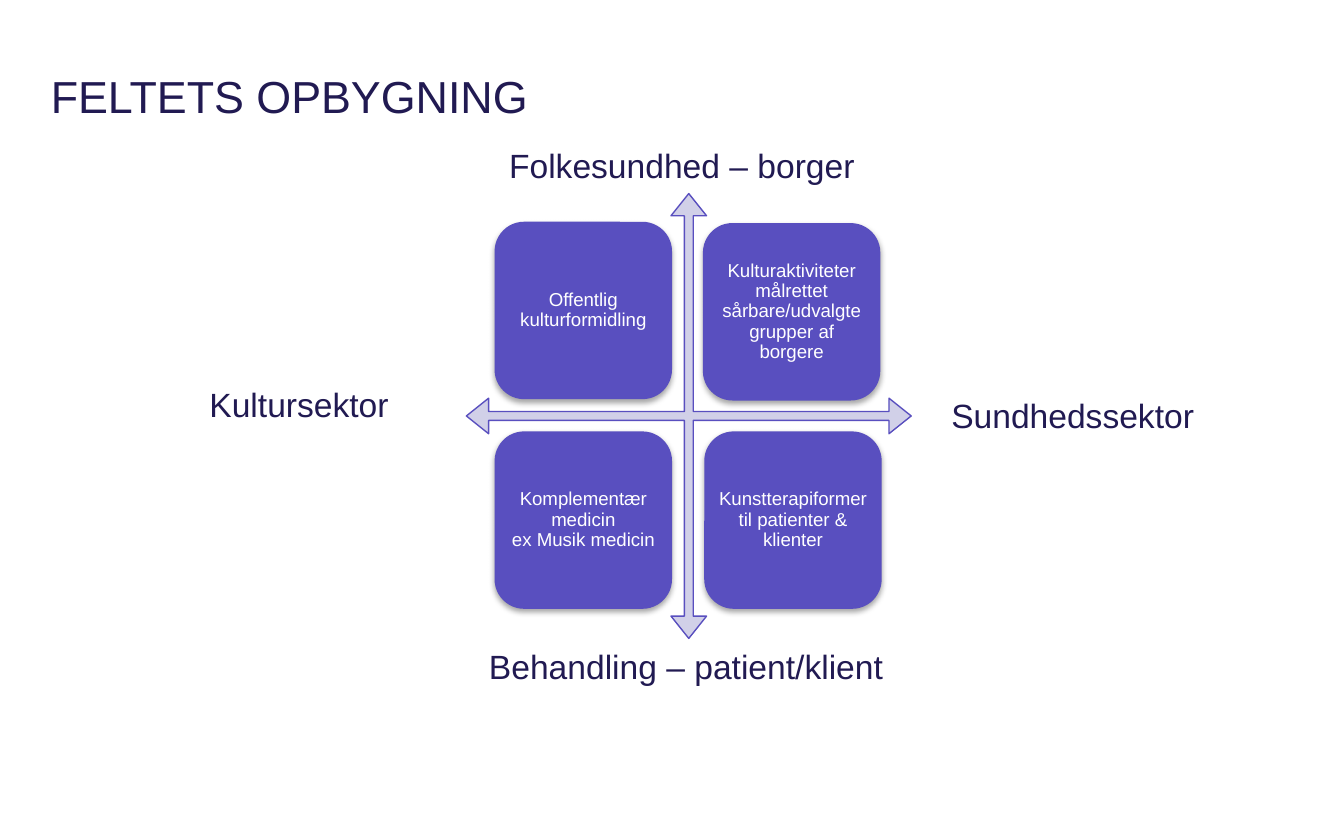
from lxml import etree
from pptx import Presentation
from pptx.dml.color import RGBColor
from pptx.enum.shapes import MSO_SHAPE
from pptx.enum.text import MSO_ANCHOR, MSO_AUTO_SIZE, PP_ALIGN
from pptx.oxml.ns import qn
from pptx.util import Inches, Pt

ROUND, QUAD = MSO_SHAPE.ROUNDED_RECTANGLE, MSO_SHAPE.QUAD_ARROW
MIDDLE, TOP = MSO_ANCHOR.MIDDLE, MSO_ANCHOR.TOP
LEFT, CENTER = PP_ALIGN.LEFT, PP_ALIGN.CENTER
GROW = MSO_AUTO_SIZE.SHAPE_TO_FIT_TEXT

# Content
TITLE = "FELTETS OPBYGNING"
FIELDS = [  # text, left, top: rows of the matrix
    ("Offentlig kulturformidling", 3.68, 1.65),
    ("Kulturaktiviteter målrettet sårbare/udvalgte grupper af borgere", 5.23, 1.66),
    ("Komplementær medicin\nex Musik medicin", 3.68, 3.21),
    ("Kunstterapiformer til patienter & klienter", 5.24, 3.21),
]
POLES = [  # text, left, top, width: ends of the two axes
    ("Folkesundhed – borger", 3.69, 1.03, 2.87),
    ("Behandling – patient/klient", 3.54, 4.76, 3.16),
    ("Sundhedssektor", 6.98, 2.89, 2.03),
    ("Kultursektor", 1.46, 2.81, 1.55),
]
INK, PURPLE, LILAC, WHITE = "211A52", "594FBF", "D1D0E8", "FFFFFF"
FIELD_SIZE = 1.32
AXES_BOX = (3.47, 1.44, 3.31, 3.31)
AXES_ADJ = (0.02, 0.04, 0.05)


def rgb(value):
    return RGBColor.from_string(value)


def write(sp, text, size, color, align=LEFT, spacing=None, **frame):
    tf = sp.text_frame
    for name, value in frame.items():
        setattr(tf, name, value)
    p = tf.paragraphs[0]
    p.text = text
    p.alignment = align
    p.line_spacing = spacing
    for r in p.runs:
        for name, value in {"name": "Arial", "size": Pt(size)}.items():
            setattr(r.font, name, value)
        r.font.color.rgb = rgb(color)


def add_shape(s, kind, box, fill):
    sp = s.shapes.add_shape(kind, *map(Inches, box))
    sp.shadow.inherit = False
    sp.fill.solid()
    sp.fill.fore_color.rgb = rgb(fill)
    return sp


def add_soft_shadow(sp):
    effects = sp._element.spPr.find(qn("a:effectLst"))
    shadow = etree.SubElement(effects, qn("a:outerShdw"), blurRad=str(Pt(3.1)),
                              dist=str(Pt(1.8)), dir="5400000", rotWithShape="0")
    color = etree.SubElement(shadow, qn("a:srgbClr"), val="000000")
    etree.SubElement(color, qn("a:alpha"), val="35000")


def add_text(s, box, *args, **frame):
    write(s.shapes.add_textbox(*map(Inches, box)), *args, **frame)


prs = Presentation()
prs.slide_width, prs.slide_height = Inches(10), Inches(6.25)
s = prs.slides.add_slide(prs.slide_layouts[6])

# Title
add_text(s, (0.28, 0.19, 9, 1.04), TITLE, 24, INK,
         word_wrap=True, vertical_anchor=MIDDLE)

# Crossed axes
axes = add_shape(s, QUAD, AXES_BOX, LILAC)
for i, value in enumerate(AXES_ADJ):
    axes.adjustments[i] = value
axes.line.color.rgb = rgb(PURPLE)
axes.line.width = Pt(0.75)

# Four fields
margins = {f"margin_{side}": Inches(0.04) for side in ("left", "right", "top", "bottom")}
for text, left, top in FIELDS:
    sp = add_shape(s, ROUND, (left, top, FIELD_SIZE, FIELD_SIZE), PURPLE)
    sp.line.fill.background()
    add_soft_shadow(sp)
    write(sp, text, 10, WHITE, CENTER, 0.9,
          word_wrap=True, vertical_anchor=MIDDLE, **margins)

# Axis labels
for text, left, top, width in POLES:
    add_text(s, (left, top, width, 0.4), text, 18, INK,
             word_wrap=False, auto_size=GROW, vertical_anchor=TOP)

prs.save("out.pptx")
